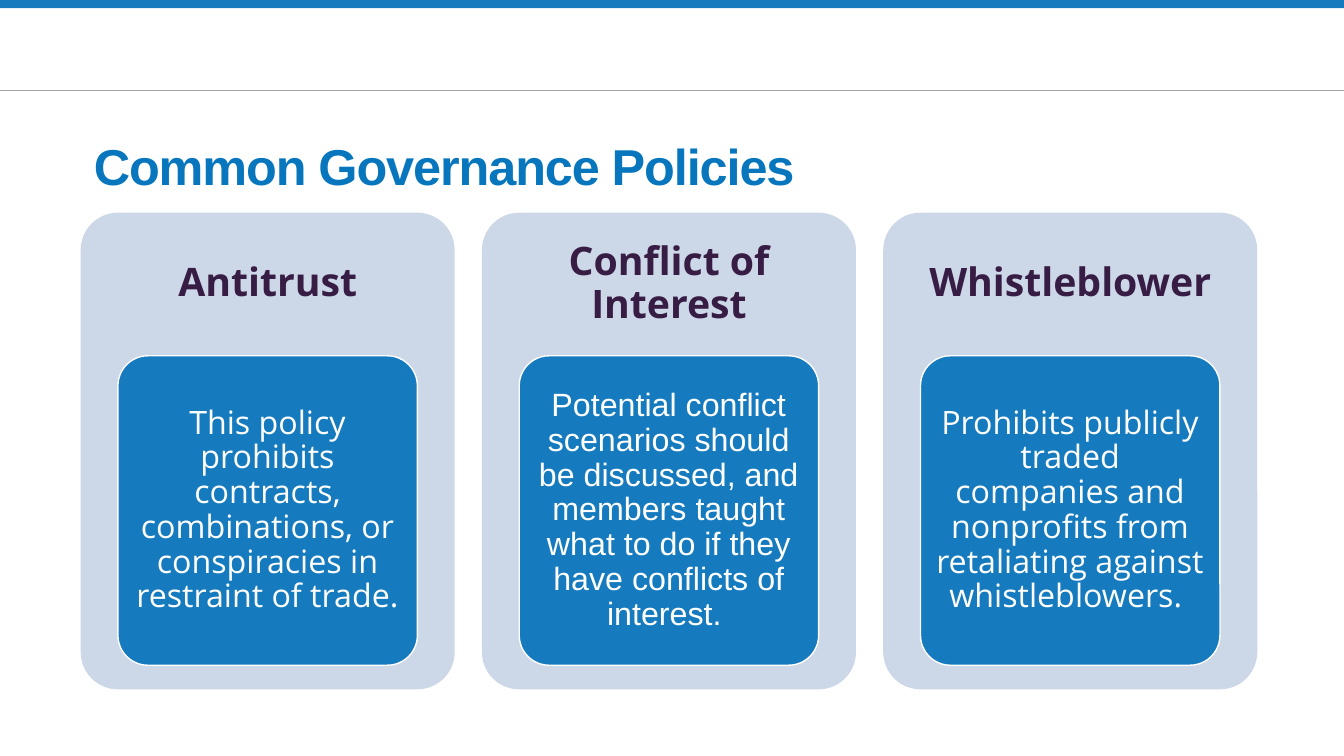
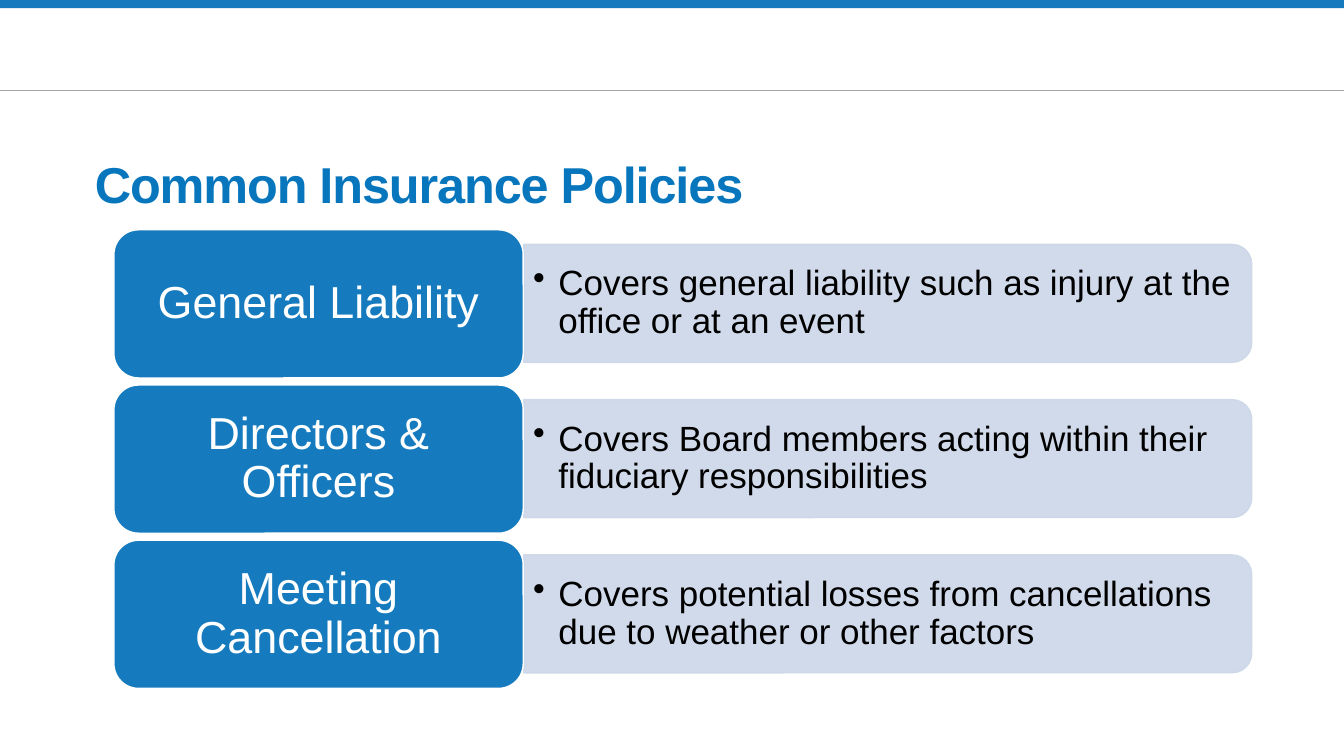
from lxml import etree
from pptx import Presentation
from pptx import util as u
from pptx.dml.color import RGBColor
from pptx.enum import shapes, text
from pptx.oxml.ns import qn

BLUE, PALE, WHITE = "157BBE", "CCD7E8", "FFFFFF"
INK, PLUM, GRAY, HEAD = "000000", "371C44", "A6A6A6", "0776BD"
ROUND = shapes.MSO_SHAPE.ROUNDED_RECTANGLE
TAB = shapes.MSO_SHAPE.ROUND_2_SAME_RECTANGLE
LEFT, MID = text.PP_ALIGN.LEFT, text.PP_ALIGN.CENTER


def px(n):
    return u.Emu(n * 9144)


def color(code):
    return RGBColor.from_string(code)


class Deck:
    def __init__(self):
        self.prs = Presentation()
        self.prs.slide_width, self.prs.slide_height = px(1333), px(750)
        self.base = self.prs.slide_layouts[5]
        self.slide = None

    def page(self, words, left, top):
        first = self.slide is None
        self.slide = self.prs.slides.add_slide(self.base)
        if first:
            self.frame()
        title = self.slide.shapes.title
        title.left, title.top, title.width, title.height = map(px, (left, top, 945, 70))
        self.label(title, words, 36, HEAD, (9, 5, 9, 5), bold=True, align=LEFT,
                   anchor=text.MSO_ANCHOR.TOP, space=1.0)
        run = title.text_frame.paragraphs[0].runs[0]
        run._r.get_or_add_rPr().set("spc", "-80")

    def frame(self):
        rule = self.line(0, 90, 1333, 90, GRAY, 0.5)
        band = self.box(shapes.MSO_SHAPE.RECTANGLE, (0, 0, 1333, 8), BLUE)
        for num, part in enumerate((rule, band), 20):
            part.element.xpath(".//p:cNvPr")[0].set("id", str(num))
            self.base.shapes.element.append(part.element)

    def line(self, x1, y1, x2, y2, hue, width):
        line = self.slide.shapes.add_connector(
            shapes.MSO_CONNECTOR.STRAIGHT, *map(px, (x1, y1, x2, y2)))
        line.line.color.rgb = color(hue)
        line.line.width = u.Pt(width)
        etree.SubElement(line.element.spPr, qn("a:effectLst"))
        return line

    def box(self, kind, area, fill, edge=None, adj=None):
        box = self.slide.shapes.add_shape(kind, *map(px, area))
        box.shadow.inherit = False
        box.fill.solid()
        box.fill.fore_color.rgb = color(fill)
        if edge:
            box.line.color.rgb = color(edge)
            box.line.width = u.Pt(1)
        else:
            box.line.fill.background()
        if adj:
            box.adjustments[0] = adj
        return box

    def fade(self, box, share):
        for hue in box.element.spPr.iter(qn("a:srgbClr")):
            etree.SubElement(hue, qn("a:alpha")).set("val", str(share * 1000))

    def label(self, shape, words, size, hue, pad, font="Arial", bold=False,
              align=MID, anchor=text.MSO_ANCHOR.MIDDLE, space=0.9, bullet=False):
        body = shape.text_frame
        body.word_wrap = True
        body.auto_size = text.MSO_AUTO_SIZE.NONE
        body.vertical_anchor = anchor
        (body.margin_left, body.margin_top,
         body.margin_right, body.margin_bottom) = map(px, pad)
        body.text = words
        par = body.paragraphs[0]
        par.alignment = align
        par.line_spacing = space
        if bullet:
            props = par._p.get_or_add_pPr()
            props.set("marL", str(px(25)))
            props.set("indent", str(px(-25)))
            etree.SubElement(props, qn("a:buChar")).set("char", "•")
        par.font.name, par.font.size, par.font.bold = font, u.Pt(size), bold
        par.font.color.rgb = color(hue)

    def card(self, left, head, words, font):
        back = self.box(ROUND, (left, 211, 371, 473), PALE, adj=0.1)
        self.label(back, head, 28, PLUM, (1, 1, 1, 332), "Open Sans", True)
        panel = self.box(ROUND, (left + 37, 353, 297, 307), BLUE, WHITE, 0.1)
        self.label(panel, words, 23, WHITE, (6, 5, 6, 5), font)

    def row(self, top, head, words):
        long, high = 722, 117
        mid = top + 73
        strip = self.box(TAB, (880 - high // 2, mid - long // 2, high, long), PALE, PALE)
        strip.rotation = 90
        self.fade(strip, 90)
        note = self.slide.shapes.add_textbox(*map(px, (519, mid - 53, 716, 106)))
        self.label(note, words, 25, INK, (10, 5, 10, 5), align=LEFT, bullet=True)
        name = self.box(ROUND, (113, top, 406, 147), BLUE, WHITE)
        self.label(name, head, 32, WHITE, (13, 7, 13, 7))


def main():
    deck = Deck()
    deck.page("Common Governance Policies", 84, 129)
    cards = [
        ("Antitrust", "This policy prohibits contracts, combinations, or "
         "conspiracies in restraint of trade.", "Open Sans"),
        ("Conflict of Interest", "Potential conflict scenarios should be discussed, and "
         "members taught what to do if they have conflicts of interest. ", "Arial"),
        ("Whistleblower", "Prohibits publicly traded companies and nonprofits from "
         "retaliating against whistleblowers. ", "Open Sans"),
    ]
    for i, card in enumerate(cards):
        deck.card(80 + 398 * i, *card)

    deck.page("Common Insurance Policies", 85, 147)
    rows = [
        ("General Liability",
         "Covers general liability such as injury at the office or at an event"),
        ("Directors & Officers",
         "Covers Board members acting within their fiduciary responsibilities"),
        ("Meeting Cancellation",
         "Covers potential losses from cancellations due to weather or other factors"),
    ]
    for i, row in enumerate(rows):
        deck.row(228 + 154 * i, *row)
    deck.prs.save("out.pptx")


if __name__ == "__main__":
    main()
